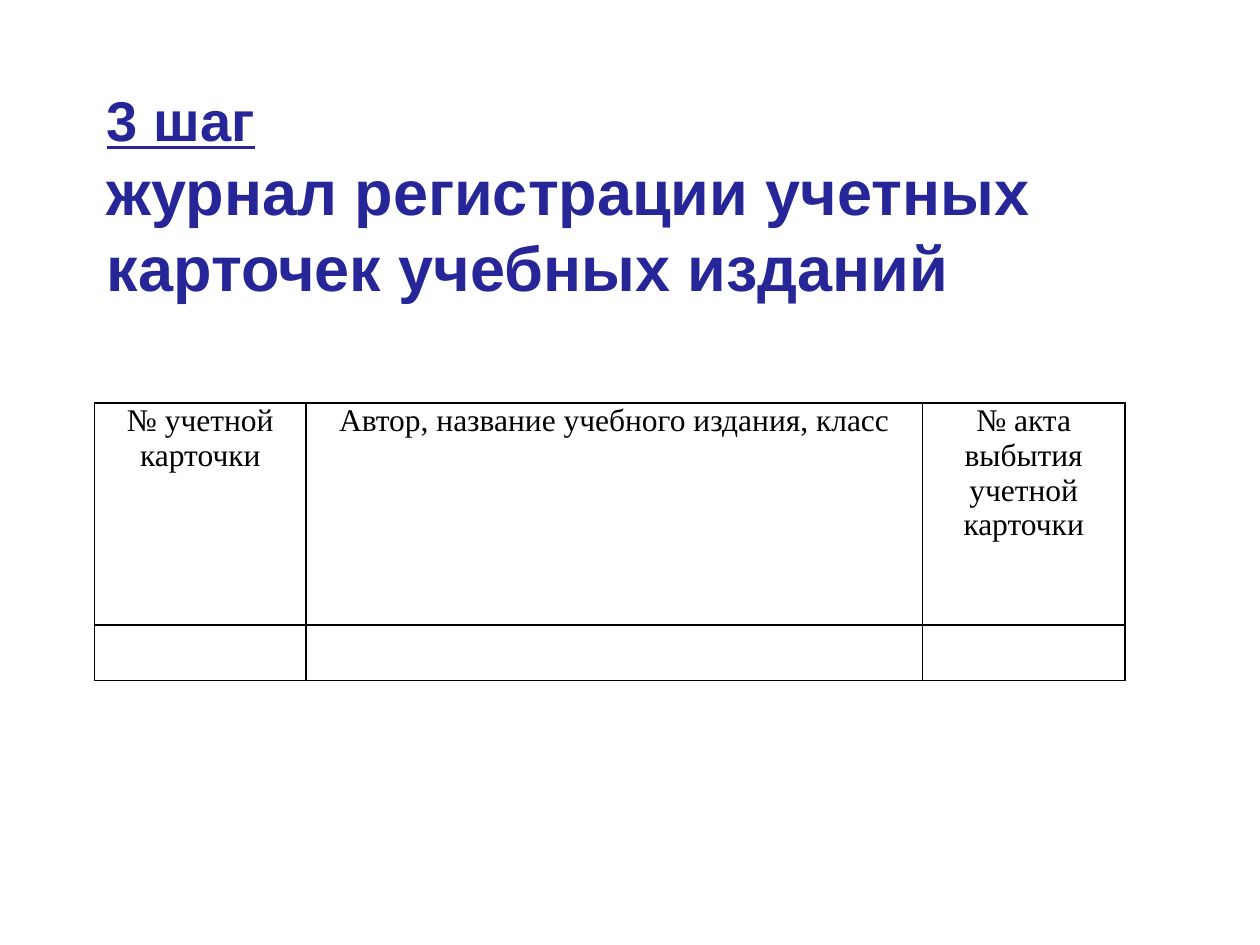
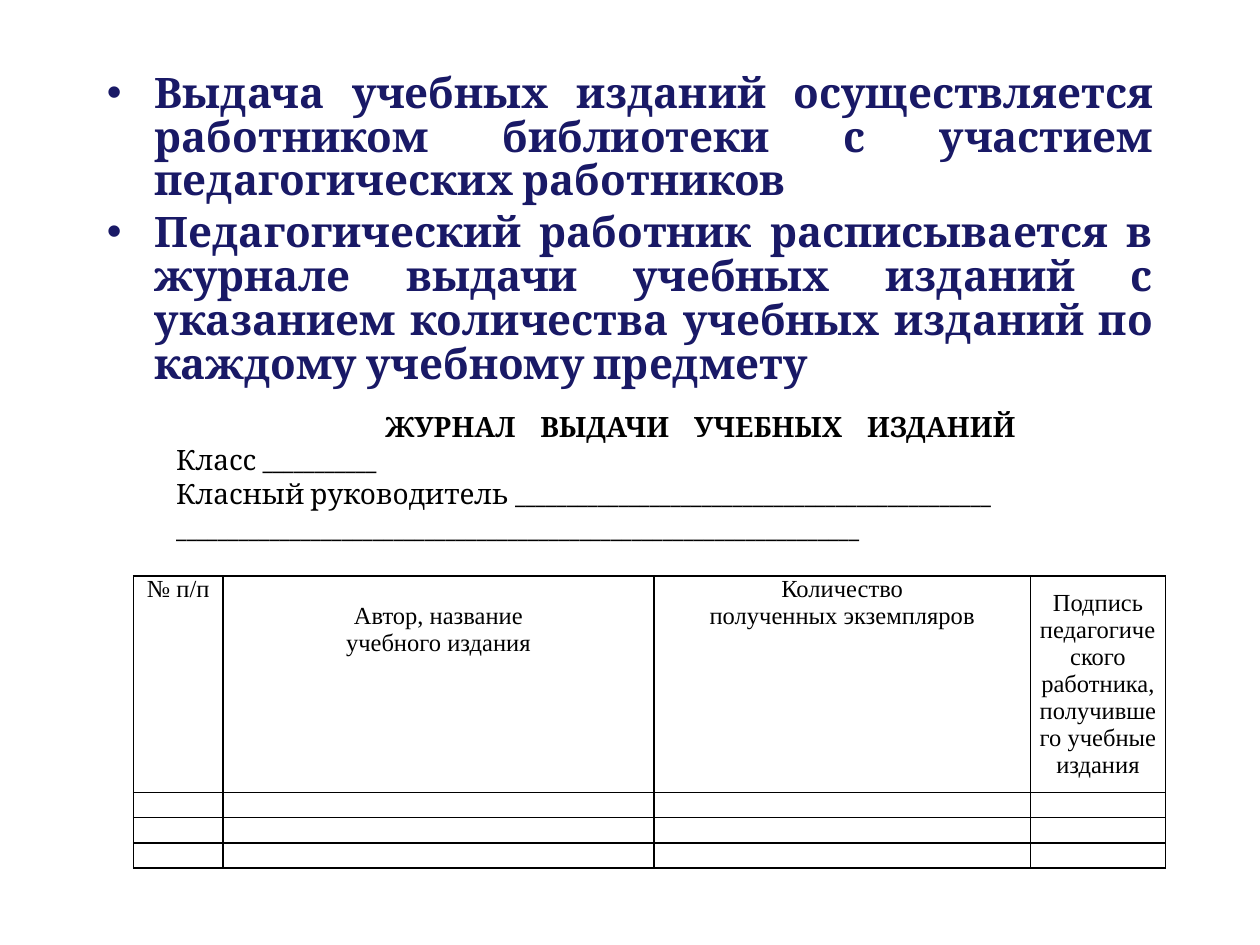
from lxml.etree import SubElement
from pptx import Presentation
from pptx.dml.color import RGBColor
from pptx.enum.text import MSO_ANCHOR as Anchor, PP_ALIGN as Align
from pptx.oxml.ns import qn
from pptx.util import Inches, Pt

COLORS = {"title": "262699", "body": "191966", "ink": "000000"}
HEADING_FONT, BODY_FONT, TABLE_FONT = "Arial", "Cambria", "Times New Roman"
LINE_HEIGHT = 0.21


def add_span(para, text, font, size, color, bold=False, underline=False):
    """Add one formatted run to a paragraph."""
    span = para.add_run()
    span.text = text
    span.font.name = font
    span.font.size = Pt(size)
    span.font.bold = bold
    span.font.underline = underline
    span.font.color.rgb = RGBColor.from_string(COLORS[color])
    return span


def add_text_frame(page, box, anchor=Anchor.TOP):
    """Add a wrapping text box and return its frame."""
    frame = page.shapes.add_textbox(*map(Inches, box)).text_frame
    frame.word_wrap = True
    frame.vertical_anchor = anchor
    return frame


def add_paragraphs(frame, count):
    """Return the first paragraph of a frame followed by new ones."""
    return [frame.paragraphs[0]] + [frame.add_paragraph() for _ in range(count - 1)]


def add_title(page, box, step, heading):
    """Write an underlined step number above a bold heading."""
    para = add_text_frame(page, box, Anchor.MIDDLE).paragraphs[0]
    add_span(para, step, HEADING_FONT, 32, "title", bold=True, underline=True)
    para.add_line_break()
    add_span(para, heading, HEADING_FONT, 36, "title", bold=True)


def add_bullets(page, box, items):
    """Write justified bold bullets with a hanging indent."""
    frame = add_text_frame(page, box)
    for index, (para, item) in enumerate(zip(add_paragraphs(frame, len(items)), items)):
        props = para._p.get_or_add_pPr()
        props.set("marL", str(Inches(0.38)))
        props.set("indent", str(-Inches(0.38)))
        SubElement(props, qn("a:buFont"), typeface="Arial")
        SubElement(props, qn("a:buChar"), char="•")
        para.alignment = Align.JUSTIFY
        para.line_spacing = Pt(25)
        if index:
            para.space_before = Pt(4.8)
        add_span(para, item, BODY_FONT, 24, "body", bold=True)


def add_journal_form(page, box, heading, lines):
    """Write a widely spaced centred heading above the form lines."""
    frame = add_text_frame(page, box)
    first, *others = add_paragraphs(frame, len(lines) + 1)
    first.alignment = Align.CENTER
    for index, word in enumerate(heading.split()):
        if index:
            gap = add_span(first, " ", BODY_FONT, 16, "ink", bold=True)
            gap.font._element.set("spc", "1050")
        add_span(first, word, BODY_FONT, 16, "ink", bold=True)
    for para, line in zip(others, lines):
        add_span(para, line, BODY_FONT, 16, "ink")


def style_cell(cell):
    """Give a cell black borders, narrow side margins and no fill."""
    props = cell._tc.get_or_add_tcPr()
    for side in ("lnL", "lnR", "lnT", "lnB"):
        line = SubElement(props, qn(f"a:{side}"), w=str(Pt(1)))
        fill = SubElement(line, qn("a:solidFill"))
        SubElement(fill, qn("a:srgbClr"), val=COLORS["ink"])
    cell.fill.background()
    cell.margin_left = cell.margin_right = Inches(0.07)
    cell.margin_top = cell.margin_bottom = 0


def add_register(page, corner, widths, heights, headers, size):
    """Draw a table with a header row above empty rows."""
    box = (*corner, sum(widths), sum(heights))
    table = page.shapes.add_table(len(heights), len(widths), *map(Inches, box)).table
    table.first_row = table.horz_banding = False
    for column, width in zip(table.columns, widths):
        column.width = Inches(width)
    for row, height in zip(table.rows, heights):
        row.height = Inches(height)
    for cell in table.iter_cells():
        style_cell(cell)
    for cell, lines in zip(table.rows[0].cells, headers):
        for para, line in zip(add_paragraphs(cell.text_frame, len(lines)), lines):
            para.alignment = Align.CENTER
            add_span(para, line, TABLE_FONT, size, "ink")
    for row in list(table.rows)[1:]:
        for cell in row.cells:
            SubElement(cell.text_frame.paragraphs[0]._p, qn("a:endParaRPr"), sz="1000")
    return table


def build_registration_page(page):
    """Build the page about the card registration journal."""
    add_title(page, (0.75, 0.92, 8.5, 1.25), "3 шаг",
              "журнал регистрации учетных карточек учебных изданий")
    headers = [["№ учетной карточки"], ["Автор, название учебного издания, класс"],
               ["№ акта выбытия учетной карточки"]]
    add_register(page, (0.75, 3.2), (1.68, 4.89, 1.61), (1.76, 0.44), headers, 18)


def build_issue_page(page):
    """Build the page about issuing books to teachers."""
    add_bullets(page, (0.75, 0.53, 8.5, 2.65), [
        "Выдача учебных изданий осуществляется работником библиотеки с участием "
        "педагогических работников",
        "Педагогический работник расписывается в журнале выдачи учебных изданий "
        "с указанием количества учебных изданий по каждому учебному предмету"])
    headers = [["№ п/п"], ["Автор, название", "учебного издания"],
               ["Количество", "полученных экземпляров"],
               ["Подпись педагогического работника, получившего учебные издания"]]
    table = add_register(page, (1.06, 4.57), (0.71, 3.42, 2.99, 1.07),
                         (1.72, 0.2, 0.2, 0.2), headers, 14)
    table.cell(0, 1).margin_top = Inches(LINE_HEIGHT)
    table.cell(0, 3).vertical_anchor = Anchor.MIDDLE
    add_journal_form(page, (1.3, 3.2, 8.52, 1.48), "ЖУРНАЛ ВЫДАЧИ УЧЕБНЫХ ИЗДАНИЙ", [
        "Класс " + "_" * 11, "Класный руководитель " + "_" * 46, "_" * 66])


def main():
    """Build and save the deck."""
    deck = Presentation()
    deck.slide_width, deck.slide_height = Inches(10), Inches(7.5)
    for build in (build_registration_page, build_issue_page):
        build(deck.slides.add_slide(deck.slide_layouts[6]))
    deck.save("out.pptx")


if __name__ == "__main__":
    main()
